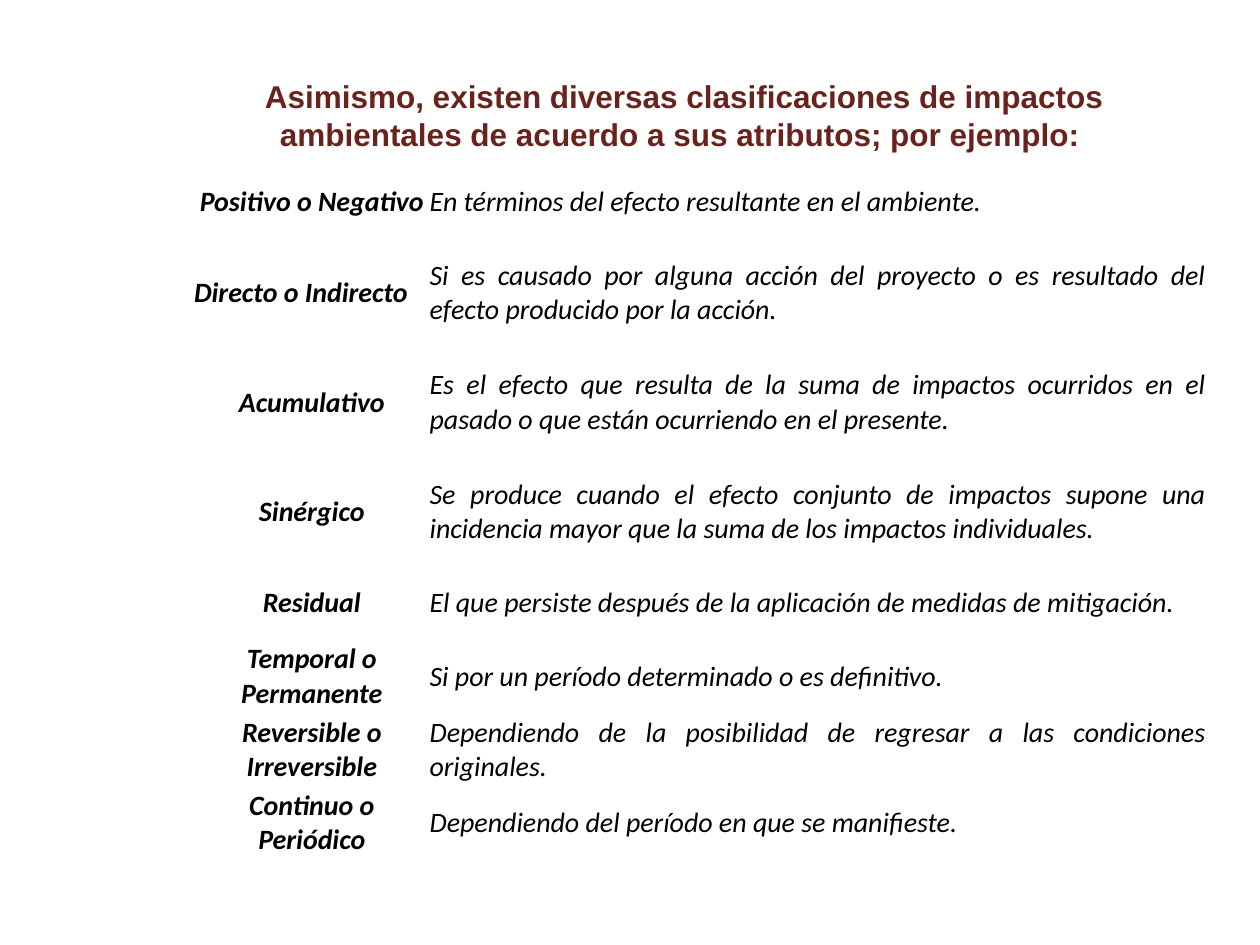
from typing import NamedTuple

from pptx import Presentation
from pptx import util as u
from pptx.dml.color import RGBColor
from pptx.enum import text

PX = 9144  # EMU per px, 100 px to the inch
TABLE_LEFT, TABLE_TOP = 154, 131
COLUMN_WIDTHS = (187, 616)
SHORT, TALL = 58, 87
ALIGN = text.PP_ALIGN


class Impact(NamedTuple):
    name: str
    meaning: str
    height: int = SHORT
    name_align: ALIGN = ALIGN.CENTER


IMPACTS = [
    Impact("Positivo o Negativo", "En términos del efecto resultante en el ambiente."),
    Impact("Directo o Indirecto",
           "Si es causado por alguna acción del proyecto o es resultado del "
           "efecto producido por la acción.", TALL, ALIGN.LEFT),
    Impact("Acumulativo",
           "Es el efecto que resulta de la suma de impactos ocurridos en el "
           "pasado o que están ocurriendo en el presente.", TALL),
    Impact("Sinérgico",
           "Se produce cuando el efecto conjunto de impactos supone una "
           "incidencia mayor que la suma de los impactos individuales.", TALL),
    Impact("Residual",
           "El que persiste después de la aplicación de medidas de mitigación."),
    Impact("Temporal o Permanente", "Si por un período determinado o es definitivo."),
    Impact("Reversible o Irreversible",
           "Dependiendo de la posibilidad de regresar a las condiciones originales."),
    Impact("Continuo o Periódico", "Dependiendo del período en que se manifieste."),
]


def px(n: int) -> u.Emu:
    return u.Emu(n * PX)


def color(value: str) -> RGBColor:
    return RGBColor.from_string(value)


def write(p, content: str, align: ALIGN, font: str, size: int, fill: str,
          bold: bool, italic: bool = False) -> None:
    p.text = content
    p.alignment = align
    for r in p.runs:
        r.font.name = font
        r.font.size = u.Pt(size)
        r.font.bold = bold
        r.font.italic = italic
        r.font.color.rgb = color(fill)


def add_title(s, content: str) -> None:
    sp = s.shapes.title
    sp.left, sp.top, sp.width, sp.height = map(px, (130, 60, 826, 62))
    tf = sp.text_frame
    tf.word_wrap = True
    tf.auto_size = text.MSO_AUTO_SIZE.NONE
    tf.vertical_anchor = text.MSO_ANCHOR.MIDDLE
    write(tf.paragraphs[0], content, ALIGN.CENTER, "Arial", 18, "6A221D", True)


def fill_cell(cell, content: str, align: ALIGN, bold: bool) -> None:
    cell.fill.background()
    cell.margin_left = cell.margin_right = cell.margin_top = cell.margin_bottom = 0
    cell.vertical_anchor = text.MSO_ANCHOR.MIDDLE
    write(cell.text_frame.paragraphs[0], content, align, "Calibri", 16, "000000", bold, True)


def add_impact_table(s, impacts: list[Impact]) -> None:
    frame = s.shapes.add_table(
        len(impacts), len(COLUMN_WIDTHS), px(TABLE_LEFT), px(TABLE_TOP),
        px(sum(COLUMN_WIDTHS)), px(sum(i.height for i in impacts)))
    table = frame.table
    table.first_row = table.horz_banding = False
    # "No Style, No Grid" leaves the cells without borders
    table._tbl.tblPr.find("{*}tableStyleId").text = "{2D5ABB26-0587-4C30-8999-92F81FD0307C}"
    for column, width in zip(table.columns, COLUMN_WIDTHS):
        column.width = px(width)
    for row, impact in zip(table.rows, impacts):
        row.height = px(impact.height)
        name_cell, meaning_cell = row.cells
        fill_cell(name_cell, impact.name, impact.name_align, True)
        fill_cell(meaning_cell, impact.meaning, ALIGN.JUSTIFY, False)


def main() -> None:
    prs = Presentation()
    prs.slide_width, prs.slide_height = px(1000), px(750)
    s = prs.slides.add_slide(prs.slide_layouts[5])
    add_title(s, "Asimismo, existen diversas clasificaciones de impactos "
                 "ambientales de acuerdo a sus atributos; por ejemplo: ")
    add_impact_table(s, IMPACTS)
    prs.save("out.pptx")


if __name__ == "__main__":
    main()
